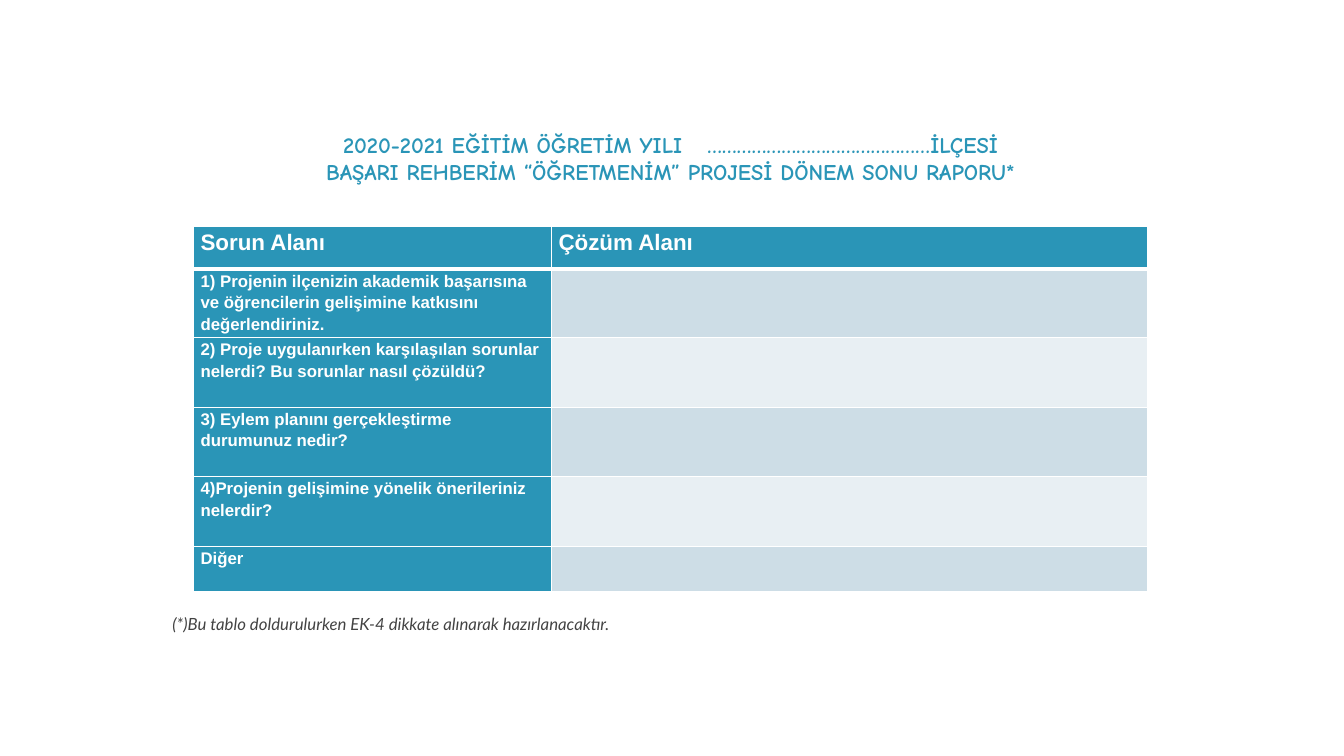
from lxml.etree import SubElement
from pptx import Presentation
from pptx.dml.color import RGBColor
from pptx.enum.text import MSO_ANCHOR, MSO_AUTO_SIZE, PP_ALIGN
from pptx.oxml.ns import qn
from pptx.util import Inches, Pt

TEAL = "2A95B7"
WHITE = "FFFFFF"
BANDS = ["CDDDE6", "E8EFF3"]


def add_run(paragraph, text, font_name, size, color, bold=False, italic=False):
    run = paragraph.add_run()
    run.text = text
    run.font.name = font_name
    run.font.size = Pt(size)
    run.font.bold = bold
    run.font.italic = italic
    run.font.color.rgb = RGBColor.from_string(color)
    return run


def add_border(cell, side, width):
    line = SubElement(cell._tc.get_or_add_tcPr(), qn(f"a:ln{side}"), w=str(Pt(width)))
    fill = SubElement(line, qn("a:solidFill"))
    SubElement(fill, qn("a:srgbClr"), val=WHITE)


presentation = Presentation()
presentation.slide_width = Inches(13.33)
presentation.slide_height = Inches(7.5)
slide = presentation.slides.add_slide(presentation.slide_layouts[1])

title = slide.shapes.title
note = slide.placeholders[1]
placeholders = [
    (title, 1.16, 1.09, MSO_ANCHOR.TOP),
    (note, 2.1, 4.33, MSO_ANCHOR.BOTTOM),
]
for shape, top, height, anchor in placeholders:
    shape.left, shape.top = Inches(1.53), Inches(top)
    shape.width, shape.height = Inches(10.24), Inches(height)
    frame = shape.text_frame
    frame.auto_size = MSO_AUTO_SIZE.NONE
    frame.word_wrap = True
    frame.vertical_anchor = anchor
    frame.margin_left = frame.margin_right = Inches(0.1)
    frame.margin_top = frame.margin_bottom = Inches(0.14)

paragraph = title.text_frame.paragraphs[0]
paragraph.alignment = PP_ALIGN.CENTER
add_run(paragraph, "2020-2021 EĞİTİM ÖĞRETİM YILI", "Comic Neue", 16, TEAL, bold=True)
gap = add_run(paragraph, " ", "Comic Neue", 16, TEAL, bold=True)
gap._r.get_or_add_rPr().set("spc", "1200")
add_run(paragraph, "………………………………………İLÇESİ", "Comic Neue", 16, TEAL, bold=True)
paragraph.add_line_break()
add_run(paragraph, "BAŞARI REHBERİM “ÖĞRETMENİM” PROJESİ DÖNEM SONU RAPORU*",
        "Comic Neue", 16, TEAL, bold=True)

paragraph = note.text_frame.paragraphs[0]
properties = paragraph._p.get_or_add_pPr()
properties.set("marL", str(Inches(0.08)))
properties.set("indent", "0")
SubElement(properties, qn("a:buNone"))
paragraph.space_before = Pt(0)
add_run(paragraph, "(*)Bu tablo doldurulurken EK-4 dikkate alınarak hazırlanacaktır.",
        "Lato", 12, "434343", italic=True)

rows = [
    (0.42, ["Sorun Alanı", "Çözüm Alanı"]),
    (0.68, ["1) Projenin ilçenizin akademik başarısına ve öğrencilerin gelişimine "
            "katkısını değerlendiriniz.", ""]),
    (0.69, ["2) Proje uygulanırken karşılaşılan sorunlar nelerdi? "
            "Bu sorunlar nasıl çözüldü?", ""]),
    (0.69, ["3) Eylem planını gerçekleştirme durumunuz nedir?", ""]),
    (0.69, ["4)Projenin gelişimine yönelik önerileriniz nelerdir?", ""]),
    (0.45, ["Diğer", ""]),
]
table = slide.shapes.add_table(
    len(rows), 2, Inches(1.92), Inches(2.25), Inches(9.46), Inches(3.62)
).table
table.columns[0].width = Inches(3.55)
table.columns[1].width = Inches(5.91)

for row_index, (height, texts) in enumerate(rows):
    table.rows[row_index].height = Inches(height)
    for column_index, text in enumerate(texts):
        cell = table.cell(row_index, column_index)
        cell.margin_left = cell.margin_right = Inches(0.07)
        cell.margin_top = cell.margin_bottom = 0
        add_border(cell, "L", 1)
        add_border(cell, "R", 1)
        add_border(cell, "T", 3 if row_index == 1 else 1)
        add_border(cell, "B", 3 if row_index == 0 else 1)
        color = TEAL if text else BANDS[(row_index - 1) % 2]
        cell.fill.solid()
        cell.fill.fore_color.rgb = RGBColor.from_string(color)
        if text:
            paragraph = cell.text_frame.paragraphs[0]
            paragraph.line_spacing = 1.15
            paragraph.space_after = Pt(0 if row_index == 1 else 10)
            size = 16 if row_index == 0 else 12
            add_run(paragraph, text, "Arial", size, WHITE, bold=True)

presentation.save("out.pptx")
